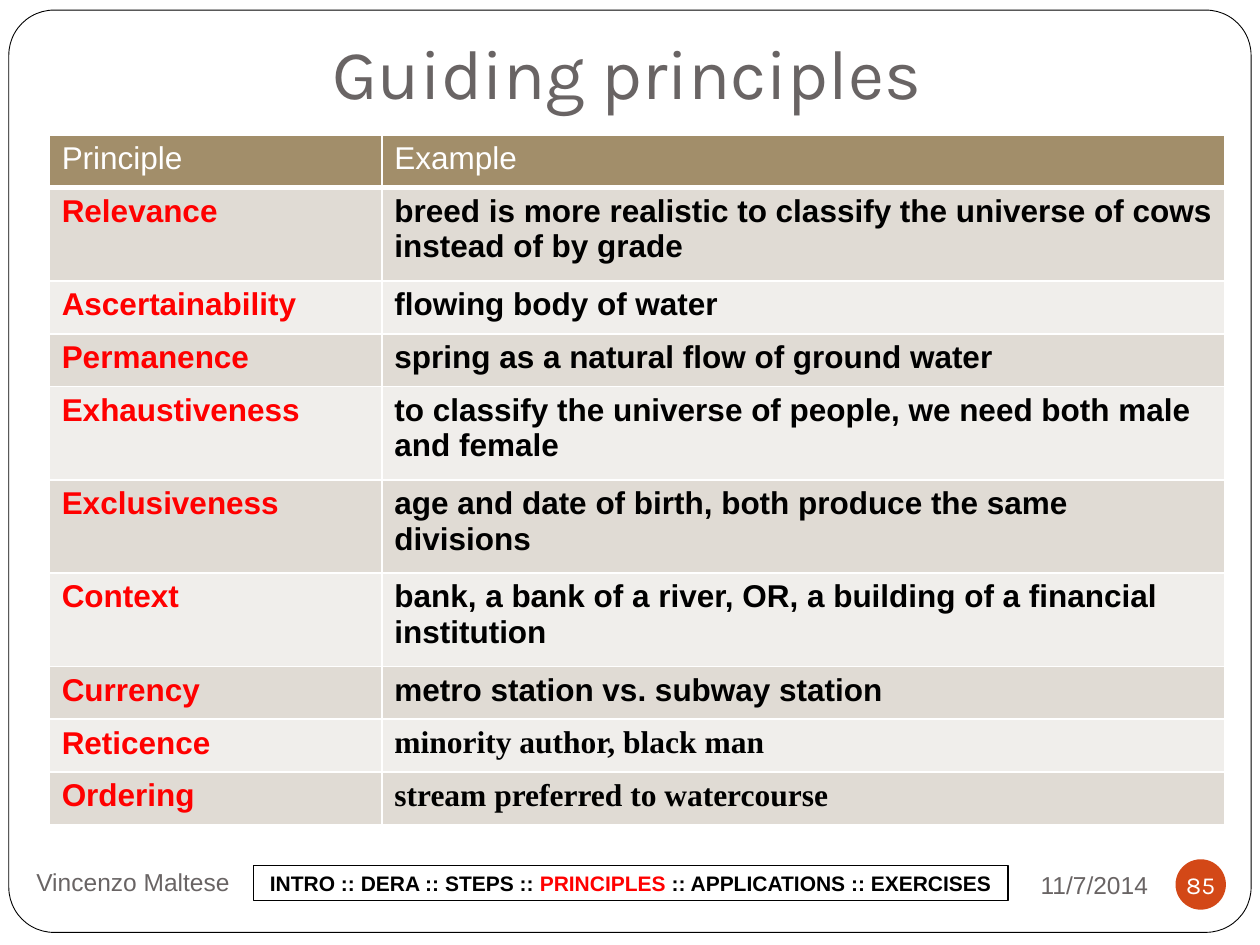
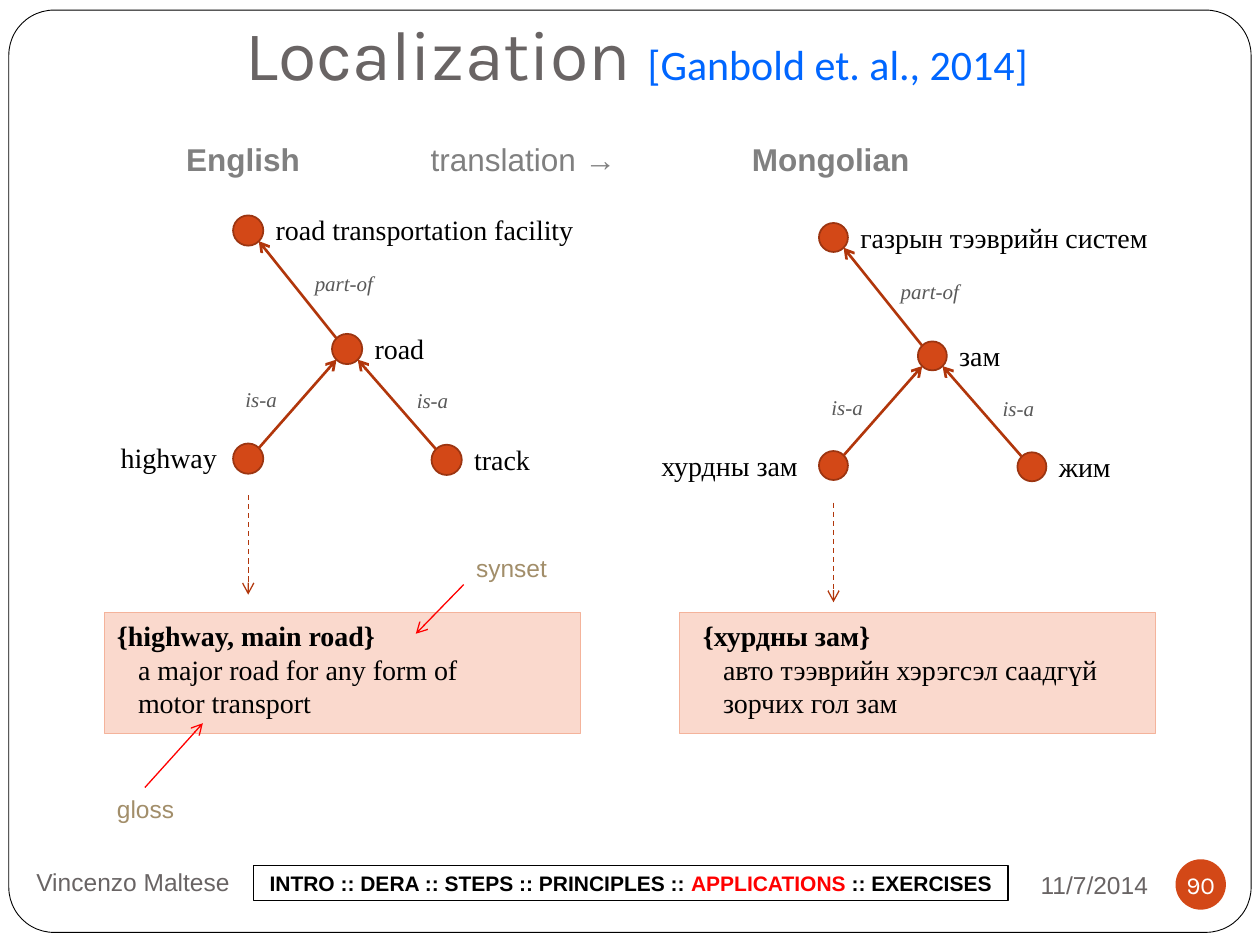
from lxml.etree import SubElement as Sub
from pptx import Presentation
from pptx.dml.color import RGBColor as Rgb
from pptx.enum.dml import MSO_LINE as Dash
from pptx.enum.shapes import MSO_CONNECTOR as Conn, MSO_SHAPE as Form
from pptx.enum.text import MSO_ANCHOR as Anchor, PP_ALIGN as Align
from pptx.oxml.ns import qn
from pptx.util import Inches, Pt

COLS, ROWS = 100, 75
UNIT = Inches(10) / COLS

HUES = {
    "white": "FFFFFF", "black": "000000", "red": "FF0000", "gray": "696464",
    "mid": "808080", "dark": "595959", "tan": "A28E6A", "odd": "E0DBD4",
    "even": "F0EEEB", "rust": "D34817", "rim": "9C3511", "link": "B1360B",
    "blush": "FAD9CD", "edge": "F4B39B", "blue": "0066FF",
}
SANS, SERIF, HEAD = "Arial", "Times New Roman", "Karla"

FONTS = {
    "title": ({"name": HEAD, "size": Pt(40)}, "gray"),
    "cite": ({"name": "Calibri", "size": Pt(24)}, "blue"),
    "foot": ({"name": SANS, "size": Pt(14)}, "gray"),
    "page": ({"name": HEAD, "size": Pt(14)}, "white"),
    "step": ({"name": SANS, "size": Pt(12), "bold": True}, "black"),
    "here": ({"name": SANS, "size": Pt(12), "bold": True}, "red"),
    "top": ({"name": SANS, "size": Pt(18), "bold": False}, "white"),
    "key": ({"name": SANS, "size": Pt(18), "bold": True}, "red"),
    "case": ({"name": SANS, "size": Pt(18), "bold": True}, "black"),
    "serif": ({"name": SERIF, "size": Pt(18), "bold": True}, "black"),
    "lang": ({"name": SANS, "size": Pt(18), "bold": True}, "mid"),
    "arrow": ({"name": SANS, "size": Pt(18)}, "mid"),
    "term": ({"name": SERIF, "size": Pt(16)}, "black"),
    "set": ({"name": SERIF, "size": Pt(16), "bold": True}, "black"),
    "rel": ({"name": SERIF, "size": Pt(12), "italic": True}, "dark"),
    "note": ({"name": SANS, "size": Pt(14)}, "tan"),
}

STEPS = ["INTRO", "DERA", "STEPS", "PRINCIPLES", "APPLICATIONS", "EXERCISES"]

RULES = [
    ("Principle", "Example", "top", 4.2),
    ("Relevance", "breed is more realistic to classify the universe of cows "
     "instead of by grade", "case", 7.4),
    ("Ascertainability", "flowing body of water", "case", 4.2),
    ("Permanence", "spring as a natural flow of ground water", "case", 4.2),
    ("Exhaustiveness", "to classify the universe of people, we need both male "
     "and female", "case", 7.4),
    ("Exclusiveness", "age and date of birth, both produce the same divisions",
     "case", 7.4),
    ("Context", "bank, a bank of a river, OR, a building of a financial "
     "institution", "case", 7.4),
    ("Currency", "metro station vs. subway station", "case", 4.2),
    ("Reticence", "minority author, black man", "serif", 4.2),
    ("Ordering", "stream preferred to watercourse", "serif", 4.2),
]

NODES = [(0, 0), (7.85, 9.4), (0, 18.1), (15.75, 18.2)]
LINKS = [(1, 0), (2, 1), (3, 1)]
TAGS = [("part-of", 5.5, 3.9), ("is-a", 0, 13.1), ("is-a", 13.6, 13.2)]


def grid(*cells):
    return [round(c * UNIT) for c in cells]


def tint(name):
    return Rgb.from_string(HUES[name])


def put(item, vals):
    for name, val in vals.items():
        setattr(item, name, val)


def add_run(para, text, style):
    run = para.add_run()
    run.text = text
    vals, hue = FONTS[style]
    put(run.font, vals)
    run.font.color.rgb = tint(hue)


def write(frame, lines, align=Align.LEFT, **vals):
    put(frame, {"word_wrap": True, "vertical_anchor": Anchor.TOP, **vals})
    for i, runs in enumerate(lines):
        para = frame.add_paragraph() if i else frame.paragraphs[0]
        para.alignment = align
        for text, style in runs:
            add_run(para, text, style)


def label(slide, box, text, style, align=Align.LEFT, **vals):
    area = slide.shapes.add_textbox(*grid(*box))
    write(area.text_frame, [[(text, style)]], align, **vals)


def shape(slide, form, box, fill, edge=None, width=1):
    item = slide.shapes.add_shape(form, *grid(*box))
    item.shadow.inherit = False
    item.fill.solid()
    item.fill.fore_color.rgb = tint(fill)
    if edge:
        item.line.color.rgb = tint(edge)
        item.line.width = Pt(width)
    else:
        item.line.fill.background()
    return item


def arrow(slide, ends, hue, width, dash=None):
    item = slide.shapes.add_connector(Conn.STRAIGHT, *grid(*ends))
    item.line.color.rgb = tint(hue)
    put(item.line, {"width": Pt(width), "dash_style": dash})
    Sub(item.line._ln, qn("a:tailEnd"), type="arrow")
    Sub(item._element.spPr, qn("a:effectLst"))


def title(slide, box, runs):
    area = slide.shapes.add_textbox(*grid(*box))
    write(area.text_frame, [runs], Align.CENTER,
          vertical_anchor=Anchor.BOTTOM, margin_bottom=Inches(0.1))


def base(deck):
    slide = deck.slides.add_slide(deck.slide_layouts[6])
    card = shape(slide, Form.ROUNDED_RECTANGLE, (0.7, 0.8, 98.6, 73.2),
                 "white", "black", 0.5)
    card.adjustments[0] = 0.049
    return slide


def footer(slide, box, page, step):
    x, y, w, h = box
    mid = {"vertical_anchor": Anchor.MIDDLE}
    flat = dict.fromkeys(
        ["margin_left", "margin_right", "margin_top", "margin_bottom"], 0)
    label(slide, (x + w - 32.3, y + 0.2, 27.1, h), "11/7/2014", "foot",
          Align.RIGHT, **mid)
    label(slide, (x, y, 43.3, h), "Vincenzo Maltese", "foot", **mid)
    disc = shape(slide, Form.OVAL, (x + w - 4, y + 0.7, 4, 4), "rust")
    write(disc.text_frame, [[(str(page), "page")]], Align.CENTER,
          **mid, **{**flat, "word_wrap": False})
    trail = shape(slide, Form.RECTANGLE, (x + 18.2, y + 1.2, 59.9, 2.8),
                  "white", "black", 0.75)
    at = STEPS.index(step)
    runs = [(" :: ".join(STEPS[:at]) + " :: ", "step"), (step, "here"),
            (" :: " + " :: ".join(STEPS[at + 1:]), "step")]
    write(trail.text_frame, [runs], Align.CENTER, **mid, **flat)


def border(cell, head):
    props = cell._tc.get_or_add_tcPr()
    for side in "LRTB":
        width = Pt(3 if head and side == "B" else 1)
        line = Sub(props, qn("a:ln" + side), w=str(width))
        Sub(Sub(line, qn("a:solidFill")), qn("a:srgbClr"), val=HUES["white"])


def matrix(slide, box):
    table = slide.shapes.add_table(len(RULES), 2, *grid(*box)).table
    put(table, {"first_row": False, "horz_banding": False})
    for col, share in zip(table.columns, (0.283, 0.717)):
        col.width = grid(box[2] * share)[0]
    for i, (rule, case, style, tall) in enumerate(RULES):
        table.rows[i].height = grid(tall)[0]
        fill = ("odd" if i % 2 else "even") if i else "tan"
        pair = [(rule, "key" if i else "top"), (case, style)]
        for j, run in enumerate(pair):
            cell = table.cell(i, j)
            border(cell, i == 0)
            cell.fill.solid()
            cell.fill.fore_color.rgb = tint(fill)
            add_run(cell.text_frame.paragraphs[0], *run)


def tree(slide, left, top, size, names, lead):
    near, far = 0.15 * size, 0.85 * size
    for (x, y), name, wide in zip(NODES, names, (31, 12, lead, 16)):
        shape(slide, Form.OVAL, (left + x, top + y, size, size),
              "rust", "rim")
        shift = 0.4 - lead if wide == lead else size
        label(slide, (left + x + shift, top + y - 0.7, wide, 3.7),
              name, "term")
    for kid, head in LINKS:
        (x1, y1), (x2, y2) = NODES[kid], NODES[head]
        a, b = (far, near) if x1 < x2 else (near, far)
        arrow(slide, (left + x1 + a, top + y1 + near,
                      left + x2 + b, top + y2 + far), "link", 1.5)
    for text, x, y in TAGS:
        label(slide, (left + x, top + y, 8, 3), text, "rel")
    drop = left + size / 2
    arrow(slide, (drop, top + 22.2, drop, top + 30.1), "link", 0.75,
          Dash.DASH)


def gloss(slide, box, words, lines, pads):
    item = shape(slide, Form.RECTANGLE, box, "blush", "edge", 0.75)
    write(item.text_frame,
          [[(words, "set")]] + [[(line, "term")] for line in lines])
    for i, para in enumerate(item.text_frame.paragraphs):
        para._p.get_or_add_pPr().set("marL", str(grid(pads[i > 0])[0]))


def notes(slide, left, top):
    label(slide, (left + 28.5, top, 9, 3.4), "synset", "note")
    label(slide, (left, top + 19.1, 8, 3.4), "gloss", "note")
    for ends in [(3.2, 19.1, 7.8, 14), (28.5, 3, 24.7, 6.9)]:
        x1, y1, x2, y2 = ends
        arrow(slide, (left + x1, top + y1, left + x2, top + y2), "red", 0.75)


def guide(deck):
    slide = base(deck)
    title(slide, (2, 1.7, 95.5, 8.3), [("Guiding principles", "title")])
    matrix(slide, (3.9, 10.7, 93.3, 54.6))
    footer(slide, (1.9, 67.5, 95.4, 5), 85, "PRINCIPLES")


def local(deck):
    slide = base(deck)
    title(slide, (3.1, 1.4, 94.9, 7.1),
          [("Localization ", "title"), ("[Ganbold et. al., 2014]", "cite")])
    for x, text, style in [(13.8, "English", "lang"),
                           (33.2, "translation →", "arrow"),
                           (58.7, "Mongolian", "lang")]:
        label(slide, (x, 10.6, 18, 4), text, style)
    gloss(slide, (8.3, 48.6, 37.8, 9.6), "{highway, main road}",
          ["a major road for any form of", "motor transport"], (0, 1.67))
    gloss(slide, (53.9, 48.6, 37.8, 9.6), "{хурдны зам}",
          ["авто тээврийн хэрэгсэл саадгүй зорчих гол зам"], (0.9, 2.5))
    tree(slide, 18.5, 17.1, 2.4,
         ["road transportation facility", "road", "highway", "track"], 10.3)
    tree(slide, 65, 17.7, 2.3,
         ["газрын тээврийн систем", "зам", "хурдны зам", "жим"], 13.9)
    notes(slide, 8.3, 43.4)
    footer(slide, (1.9, 67.5, 95.4, 5), 90, "APPLICATIONS")


def main():
    deck = Presentation()
    wide, tall = grid(COLS, ROWS)
    put(deck, {"slide_width": wide, "slide_height": tall})
    guide(deck)
    local(deck)
    deck.save("out.pptx")


if __name__ == "__main__":
    main()
